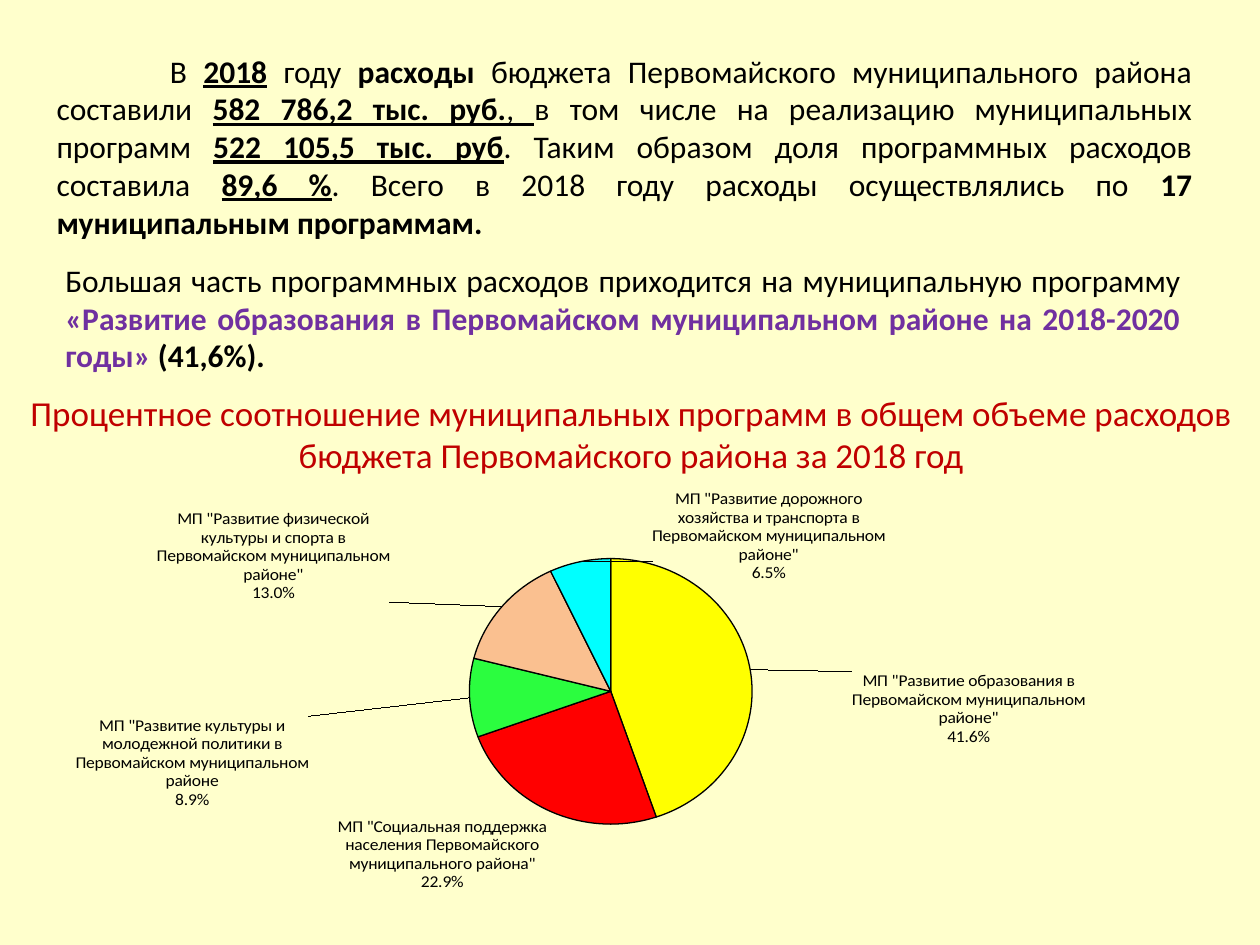
from copy import deepcopy

from pptx import Presentation
from pptx.chart.data import CategoryChartData
from pptx.dml.color import RGBColor
from pptx.enum.chart import XL_CHART_TYPE as ChartType, XL_LABEL_POSITION as LabelPosition
from pptx.enum.text import MSO_ANCHOR as Anchor, PP_ALIGN as Align
from pptx.oxml import parse_xml
from pptx.oxml.ns import nsdecls, qn
from pptx.util import Inches, Pt

FONT = "Calibri"
CREAM = RGBColor(0xFF, 0xFF, 0xCC)
BLACK = RGBColor(0x00, 0x00, 0x00)
PURPLE = RGBColor(0x70, 0x30, 0xA0)
DARK_RED = RGBColor(0xC0, 0x00, 0x00)

# Run styles
PLAIN = {}
BOLD = {"bold": True}
UNDERLINED = {"underline": True}
KEY_FIGURE = {"bold": True, "underline": True}
PROGRAM_NAME = {"bold": True, "color": PURPLE}

SPENDING_RUNS = [
    ("В ", PLAIN), ("2018", KEY_FIGURE), (" году ", PLAIN), ("расходы", BOLD),
    (" бюджета Первомайского муниципального района составили ", PLAIN),
    ("582 786,2 тыс. руб.", KEY_FIGURE), (", ", UNDERLINED),
    ("в том числе на реализацию муниципальных программ ", PLAIN),
    ("522 105,5 тыс. руб", KEY_FIGURE),
    (". Таким образом доля программных расходов составила ", PLAIN),
    ("89,6 %", KEY_FIGURE),
    (". Всего в 2018 году расходы осуществлялись по ", PLAIN),
    ("17 муниципальным программам.", BOLD),
]
MAIN_PROGRAM_RUNS = [
    ("Большая часть программных расходов приходится на муниципальную программу ", PLAIN),
    ("«Развитие образования в Первомайском муниципальном районе на 2018-2020 годы» ",
     PROGRAM_NAME),
    ("(41,6%).", BOLD),
]
HEADING = ("Процентное соотношение муниципальных программ в общем объеме расходов "
           "бюджета Первомайского района за 2018 год")

# Program, share, slice colour, label shift as a fraction of the chart
PROGRAMS = [
    ('МП "Развитие образования в Первомайском муниципальном районе"',
     0.416, RGBColor(0xFF, 0xFF, 0x00), (0.08, 0.18)),
    ('МП "Социальная поддержка населения Первомайского муниципального района"',
     0.229, RGBColor(0xFF, 0x00, 0x00), None),
    ('МП "Развитие культуры и молодежной политики в Первомайском муниципальном районе',
     0.089, RGBColor(0x2B, 0xFD, 0x3F), (-0.13, 0.15)),
    ('МП "Развитие физической культуры и спорта в Первомайском муниципальном районе"',
     0.13, RGBColor(0xFA, 0xC0, 0x90), (-0.09, 0)),
    ('МП "Развитие дорожного хозяйства и транспорта в Первомайском муниципальном районе"',
     0.065, RGBColor(0x00, 0xFF, 0xFF), (0.26, 0.04)),
]


def style_font(font, size, color=BLACK, bold=False, underline=False):
    font.name = FONT
    font.size = Pt(size)
    font.bold = bold
    font.underline = underline
    font.color.rgb = color


def add_paragraph_box(slide, box, runs, first_indent=0):
    """Justified paragraph with mixed run styles."""
    text_frame = slide.shapes.add_textbox(*box).text_frame
    text_frame.word_wrap = True
    paragraph = text_frame.paragraphs[0]
    paragraph.alignment = Align.JUSTIFY
    paragraph._p.get_or_add_pPr().set("indent", str(Inches(first_indent)))
    for text, style in runs:
        run = paragraph.add_run()
        run.text = text
        style_font(run.font, 18, **style)


def place_heading(slide, box):
    """Chart heading in the title placeholder."""
    title = slide.shapes.title
    title.left, title.top, title.width, title.height = box
    text_frame = title.text_frame
    text_frame.text = HEADING
    text_frame.word_wrap = True
    text_frame.vertical_anchor = Anchor.TOP
    paragraph = text_frame.paragraphs[0]
    paragraph.alignment = Align.CENTER
    style_font(paragraph.runs[0].font, 20, DARK_RED)


def manual_layout(x, y, extra=""):
    return parse_xml(
        f'<c:layout {nsdecls("c")}><c:manualLayout>{extra}'
        f'<c:x val="{x}"/><c:y val="{y}"/></c:manualLayout></c:layout>')


def set_plot_box(chart, x, y, width, height):
    plot_area = chart._chartSpace.chart.plotArea
    for old_layout in plot_area.findall(qn("c:layout")):
        plot_area.remove(old_layout)
    layout = manual_layout(x, y, '<c:layoutTarget val="inner"/>'
                                 '<c:xMode val="edge"/><c:yMode val="edge"/>')
    for tag, value in (("w", width), ("h", height)):
        layout[0].append(parse_xml(f'<c:{tag} {nsdecls("c")} val="{value}"/>'))
    plot_area.insert(0, layout)


def label_slices(series):
    """Name and share outside each slice, some moved away on leader lines."""
    labels = series.data_labels
    labels.number_format = "0.0%"
    labels.number_format_is_linked = False
    labels.position = LabelPosition.OUTSIDE_END
    labels.show_value = True
    labels.show_category_name = True
    style_font(labels.font, 10)

    element = labels._element
    for leader_lines in element.findall(qn("c:showLeaderLines")):
        element.remove(leader_lines)
    element.append(parse_xml(f'<c:separator {nsdecls("c")}>\n</c:separator>'))
    shared = list(element)
    element.append(parse_xml(f'<c:showLeaderLines {nsdecls("c")} val="1"/>'))

    moved = [(i, program[3]) for i, program in enumerate(PROGRAMS) if program[3]]
    for place, (index, shift) in enumerate(moved):
        label = parse_xml(f'<c:dLbl {nsdecls("c")}><c:idx val="{index}"/></c:dLbl>')
        label.append(manual_layout(*shift))
        label.extend([deepcopy(child) for child in shared])
        element.insert(place, label)


def add_program_chart(slide, box):
    """Pie of program shares."""
    data = CategoryChartData(number_format="0.0%")
    data.categories = [program[0] for program in PROGRAMS]
    data.add_series("Series 1", [program[1] for program in PROGRAMS])
    chart = slide.shapes.add_chart(ChartType.PIE, *box, data).chart
    chart.has_legend = False
    chart.has_title = False
    style_font(chart.font, 10)
    set_plot_box(chart, 0.36, 0.16, 0.24, 0.62)

    plot = chart.plots[0]
    plot.vary_by_categories = True
    series = plot.series[0]
    for index, program in enumerate(PROGRAMS):
        point_format = series.points[index].format
        point_format.fill.solid()
        point_format.fill.fore_color.rgb = program[2]
        point_format.line.color.rgb = BLACK
        point_format.line.width = Pt(0.75)
    label_slices(series)


def main():
    presentation = Presentation()
    presentation.slide_width, presentation.slide_height = Inches(10), Inches(7.5)
    slide = presentation.slides.add_slide(presentation.slide_layouts[5])
    slide.background.fill.solid()
    slide.background.fill.fore_color.rgb = CREAM

    def box(*lengths):
        return [Inches(length) for length in lengths]

    add_paragraph_box(slide, box(0.35, 0.36, 9.21, 1.62), SPENDING_RUNS, first_indent=0.9)
    add_paragraph_box(slide, box(0.42, 2.02, 9.05, 1.01), MAIN_PROGRAM_RUNS)
    place_heading(slide, box(0.12, 3.06, 9.78, 0.77))
    add_program_chart(slide, box(0.35, 3.67, 9.37, 3.62))
    presentation.save("out.pptx")


if __name__ == "__main__":
    main()
